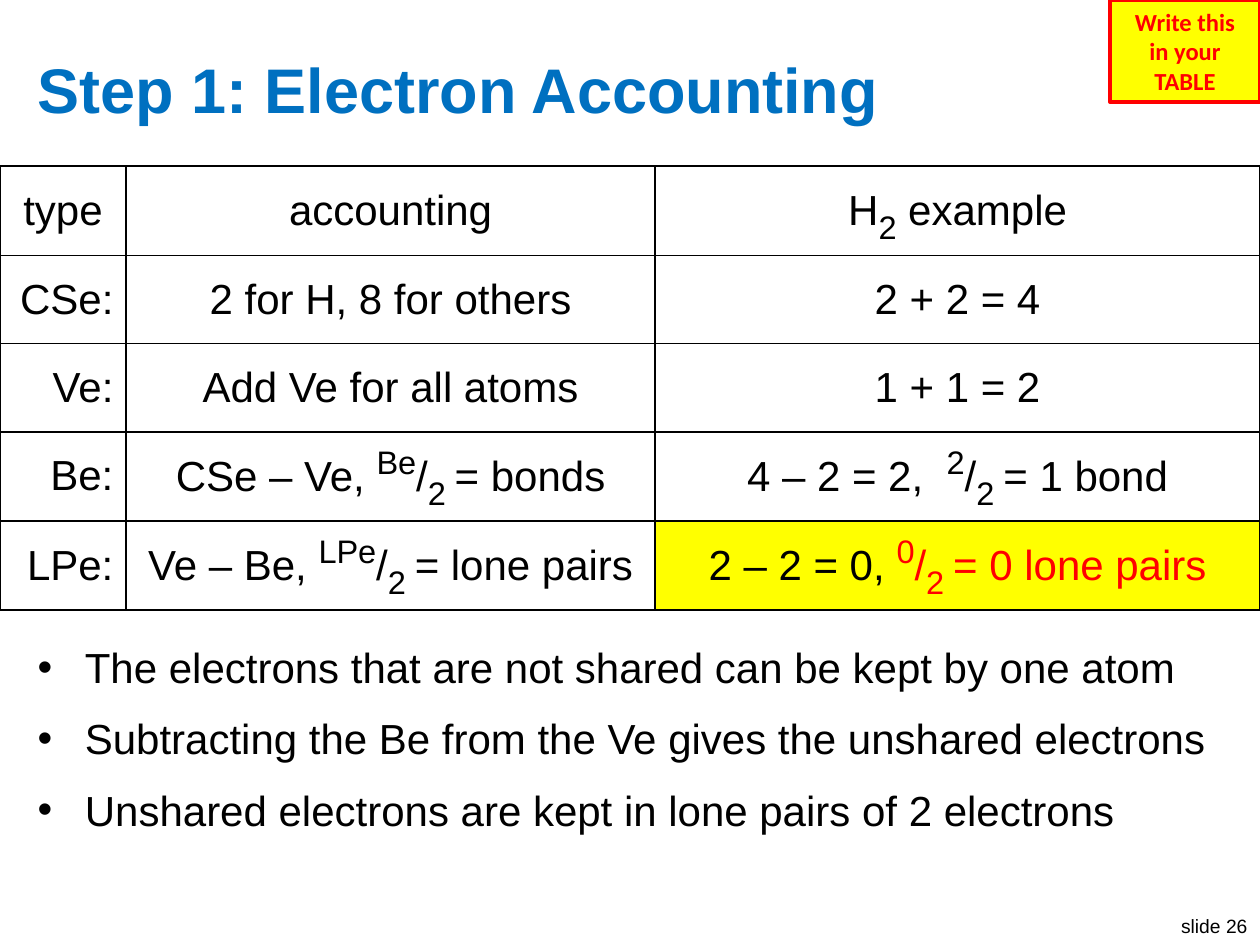
from lxml import etree
from pptx import Presentation
from pptx import util as u
from pptx.dml.color import RGBColor
from pptx.enum import shapes, text
from pptx.oxml import ns

COLORS = {"black": "000000", "white": "FFFFFF", "blue": "0070C0",
          "red": "FF0000", "yellow": "FFFF00"}
LEFT, CENTER, RIGHT = text.PP_ALIGN.LEFT, text.PP_ALIGN.CENTER, text.PP_ALIGN.RIGHT
BASELINES = {"^": "30000", "_": "-25000"}

# "|" separates spans; a leading "^" raises a span and "_" lowers it.
ROWS = [
    ("type", "accounting", "H|_2| example"),
    ("CSe:", "2 for H, 8 for others", "2 + 2 = 4"),
    ("Ve:", "Add Ve for all atoms", "1 + 1 = 2"),
    ("Be:", "CSe – Ve, |^Be|/|_2 |= bonds", "4 – 2 = 2,  |^2|/|_2 |= 1 bond"),
    ("LPe:", "Ve – Be, |^LPe|/|_2 |= lone pairs", "2 – 2 = 0, |^0|/|_2 |= 0 lone pairs"),
]
BULLETS = [
    "The electrons that are not shared can be kept by one atom",
    "Subtracting the Be from the Ve gives the unshared electrons",
    "Unshared electrons are kept in lone pairs of 2 electrons",
]


def rgb(name):
    return RGBColor.from_string(COLORS[name])


def add_xml(parent, tag, **attributes):
    return etree.SubElement(parent, ns.qn(tag), **attributes)


class SlideBuilder:
    def __init__(self, page, font="Arial", size=24, script_size=32):
        self.page = page
        self.font = font
        self.size = size
        self.script_size = script_size

    def style(self, para, size=None, color="black", bold=False, font=None, align=LEFT):
        para.alignment = align
        para.font.name = font or self.font
        para.font.size = u.Pt(size or self.size)
        para.font.bold = bold
        para.font.color.rgb = rgb(color)

    def fill_text(self, frame, lines, **style):
        for number, line in enumerate(lines):
            para = frame.add_paragraph() if number else frame.paragraphs[0]
            para.text = line
            self.style(para, **style)

    def text_box(self, left, top, width, height, lines, wrap=True,
                 anchor=text.MSO_ANCHOR.TOP, **style):
        box = self.page.shapes.add_textbox(*map(u.Pt, (left, top, width, height)))
        frame = box.text_frame
        frame.word_wrap = wrap
        frame.vertical_anchor = anchor
        self.fill_text(frame, lines, **style)
        return frame

    def bullet_list(self, left, top, width, height, lines, indent=27):
        frame = self.text_box(left, top, width, height, lines)
        for para in frame.paragraphs:
            para.space_before = u.Pt(12)
            properties = para._p.get_or_add_pPr()
            properties.set("marL", str(u.Pt(indent)))
            properties.set("indent", str(-u.Pt(indent)))
            bullet_font = etree.Element(ns.qn("a:buFont"), typeface=self.font)
            bullet = etree.Element(ns.qn("a:buChar"), char="•")
            properties.find(ns.qn("a:spcBef")).addnext(bullet_font)
            bullet_font.addnext(bullet)

    def note(self, left, top, width, height, lines, **style):
        box = self.page.shapes.add_shape(
            shapes.MSO_SHAPE.RECTANGLE, *map(u.Pt, (left, top, width, height)))
        box.shadow.inherit = False
        box.fill.solid()
        box.fill.fore_color.rgb = rgb("yellow")
        box.line.color.rgb = rgb("red")
        box.line.width = u.Pt(2.25)
        box.text_frame.word_wrap = True
        self.fill_text(box.text_frame, lines, align=CENTER, **style)

    def table(self, left, top, widths, row_height, rows):
        grid = self.page.shapes.add_table(
            len(rows), len(widths), u.Pt(left), u.Pt(top),
            u.Pt(sum(widths)), u.Pt(row_height * len(rows))).table
        grid.first_row = grid.horz_banding = False
        for column, width in zip(grid.columns, widths):
            column.width = u.Pt(width)
        for r, row in enumerate(rows):
            grid.rows[r].height = u.Pt(row_height)
            for c, content in enumerate(row):
                is_answer = r == len(rows) - 1 and c == len(row) - 1
                self.cell(grid.cell(r, c), content,
                          align=RIGHT if r and c == 0 else CENTER,
                          fill="yellow" if is_answer else "white",
                          result_color="red" if is_answer else "black")

    def cell(self, cell, content, align, fill, result_color):
        """Fill one cell; every span after the first takes result_color."""
        cell.vertical_anchor = text.MSO_ANCHOR.MIDDLE
        self.borders(cell)
        cell.fill.solid()
        cell.fill.fore_color.rgb = rgb(fill)
        para = cell.text_frame.paragraphs[0]
        self.style(para, align=align)
        for number, part in enumerate(content.split("|")):
            span = para.add_run()
            span.text = part.lstrip("^_")
            if part[0] in BASELINES:
                span.font.size = u.Pt(self.script_size)
                span._r.get_or_add_rPr().set("baseline", BASELINES[part[0]])
            if number and result_color != "black":
                span.font.color.rgb = rgb(result_color)

    def borders(self, cell):
        properties = cell._tc.get_or_add_tcPr()
        for side in "LRTB":
            line = add_xml(properties, f"a:ln{side}", w=str(u.Pt(1)))
            add_xml(add_xml(line, "a:solidFill"), "a:srgbClr", val=COLORS["black"])


def main():
    deck = Presentation()
    deck.slide_width, deck.slide_height = u.Pt(720), u.Pt(540)
    builder = SlideBuilder(deck.slides.add_slide(deck.slide_layouts[6]))
    builder.text_box(666, 519, 54, 21, ["slide 26"], wrap=False, size=11, align=RIGHT)
    builder.text_box(14.4, 21.6, 691.2, 57.6, ["Step 1: Electron Accounting"],
                     anchor=text.MSO_ANCHOR.MIDDLE, size=36, color="blue", bold=True)
    builder.bullet_list(14.4, 363, 691.2, 160, BULLETS)
    builder.table(0, 95, [72, 302.4, 345.6], 50.4, ROWS)
    builder.note(634.3, 0, 85.7, 58.3, ["Write this", "in your TABLE"],
                 size=14, color="red", bold=True, font="Calibri")
    deck.save("out.pptx")


if __name__ == "__main__":
    main()
